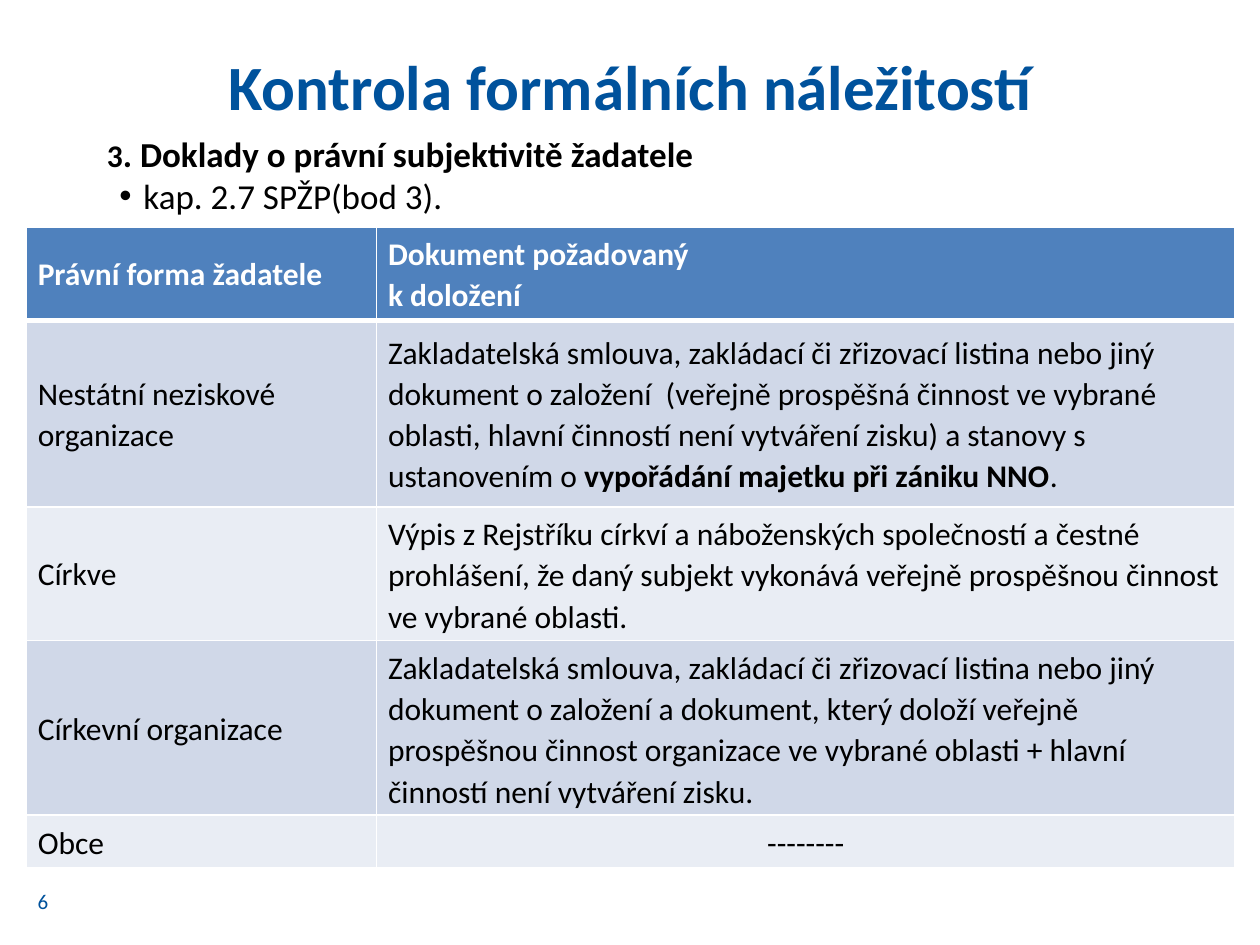
from pptx import Presentation
from pptx import util as u
from pptx.dml.color import RGBColor
from pptx.enum import text as t
from pptx.oxml import parse_xml
from pptx.oxml.ns import nsdecls

IN, MID = u.Inches, t.MSO_ANCHOR.MIDDLE
LEFT, CENTER, JUST = t.PP_ALIGN.LEFT, t.PP_ALIGN.CENTER, t.PP_ALIGN.JUSTIFY


def color(hue):
    return RGBColor.from_string(hue)


def write(para, words, size, hue="000000", bold=False, align=LEFT):
    para.alignment = align
    for n, line in enumerate(words.split("\n")):
        if n:
            para.add_line_break()
        run = para.add_run()
        run.text = line
        for key, val in {"name": "Calibri", "size": u.Pt(size), "bold": bold}.items():
            setattr(run.font, key, val)
        run.font.color.rgb = color(hue)


deck = Presentation()
deck.slide_width, deck.slide_height = IN(10), IN(7.5)
slide = deck.slides.add_slide(deck.slide_layouts[5])

title = slide.shapes.title
for key, val in {"left": 0.5, "top": 0.14, "width": 9, "height": 1.07}.items():
    setattr(title, key, IN(val))
title.text_frame.vertical_anchor = MID
write(title.text_frame.paragraphs[0], "Kontrola formálních náležitostí", 36, "00529C", True, CENTER)

page = slide.shapes.add_textbox(IN(0.2), IN(6.95), IN(0.55), IN(0.4)).text_frame
page.word_wrap = True
page.vertical_anchor = MID
write(page.paragraphs[0], "6", 12, "00529C")

rows = [
    ("Právní forma žadatele", ["Dokument požadovaný \nk doložení"]),
    ("Nestátní neziskové organizace", [
        "Zakladatelská smlouva, zakládací či zřizovací listina nebo jiný dokument o založení  "
        "(veřejně prospěšná činnost ve vybrané oblasti, hlavní činností není vytváření zisku) "
        "a stanovy s ustanovením o ", "vypořádání majetku při zániku NNO", "."]),
    ("Církve", [
        "Výpis z Rejstříku církví a náboženských společností a čestné prohlášení, "
        "že daný subjekt vykonává veřejně prospěšnou činnost ve vybrané oblasti."]),
    ("Církevní organizace", [
        "Zakladatelská smlouva, zakládací či zřizovací listina nebo jiný dokument o založení "
        "a dokument, který doloží veřejně prospěšnou činnost organizace ve vybrané oblasti "
        "+ hlavní činností není vytváření zisku."]),
    ("Obce", ["--------"]),
]
table = slide.shapes.add_table(len(rows), 2, IN(0.21), IN(1.8), IN(9.59), IN(4.84)).table
for col, wide in zip(table.columns, (2.78, 6.81)):
    col.width = IN(wide)
for row, high in zip(table.rows, (0.69, 1.48, 0.99, 1.29, 0.39)):
    row.height = IN(high)

pads = {"margin_left": 0.09, "margin_right": 0.09, "margin_top": 0.05, "margin_bottom": 0.05}
for i, (form, proof) in enumerate(rows):
    head = i == 0
    fill = "4F81BD" if head else ("E9EDF4", "D0D8E8")[i % 2]
    for j, parts in enumerate(([form], proof)):
        cell = table.cell(i, j)
        for key, val in pads.items():
            setattr(cell, key, IN(val))
        cell.vertical_anchor = MID
        props = cell._tc.get_or_add_tcPr()
        for side in ("lnL", "lnR", "lnT", "lnB"):
            thick = (head and side == "lnB") or (i == 1 and side == "lnT")
            props.append(parse_xml(
                f'<a:{side} {nsdecls("a")} w="{u.Pt(3 if thick else 1)}"><a:solidFill>'
                f'<a:srgbClr val="FFFFFF"/></a:solidFill></a:{side}>'))
        cell.fill.solid()
        cell.fill.fore_color.rgb = color(fill)
        para = cell.text_frame.paragraphs[0]
        para.line_spacing, para.space_after = 1.07, u.Pt(8)
        align = CENTER if parts == ["--------"] else LEFT
        for k, words in enumerate(parts):
            write(para, words, 18, "FFFFFF" if head else "000000", head or k == 1, align)

intro = slide.shapes.add_textbox(IN(0.75), IN(1), IN(8.44), IN(0.77)).text_frame
intro.word_wrap = True
para = intro.paragraphs[0]
write(para, "3", 18, bold=True, align=JUST)
write(para, ". Doklady o právní subjektivitě žadatele", 20, bold=True, align=JUST)
para = intro.add_paragraph()
props = para._p.get_or_add_pPr()
props.set("marL", str(IN(0.29)))
props.set("indent", str(IN(-0.19)))
for tag in ('buFont {} typeface="Arial"', 'buChar {} char="•"'):
    props.append(parse_xml(f"<a:{tag.format(nsdecls('a'))}/>"))
write(para, "kap. 2.7 SPŽP(bod 3).", 20, align=JUST)

deck.save("out.pptx")
